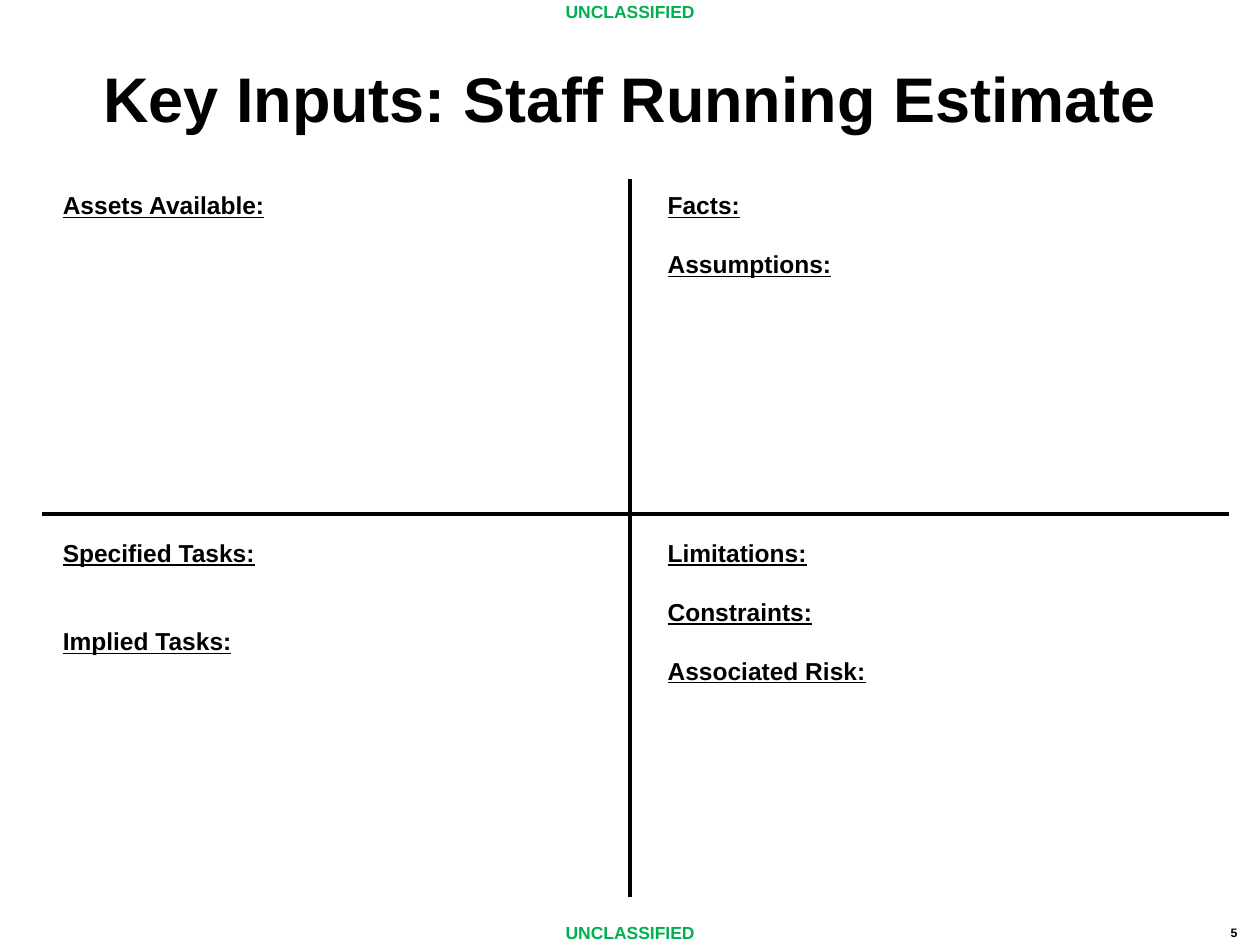
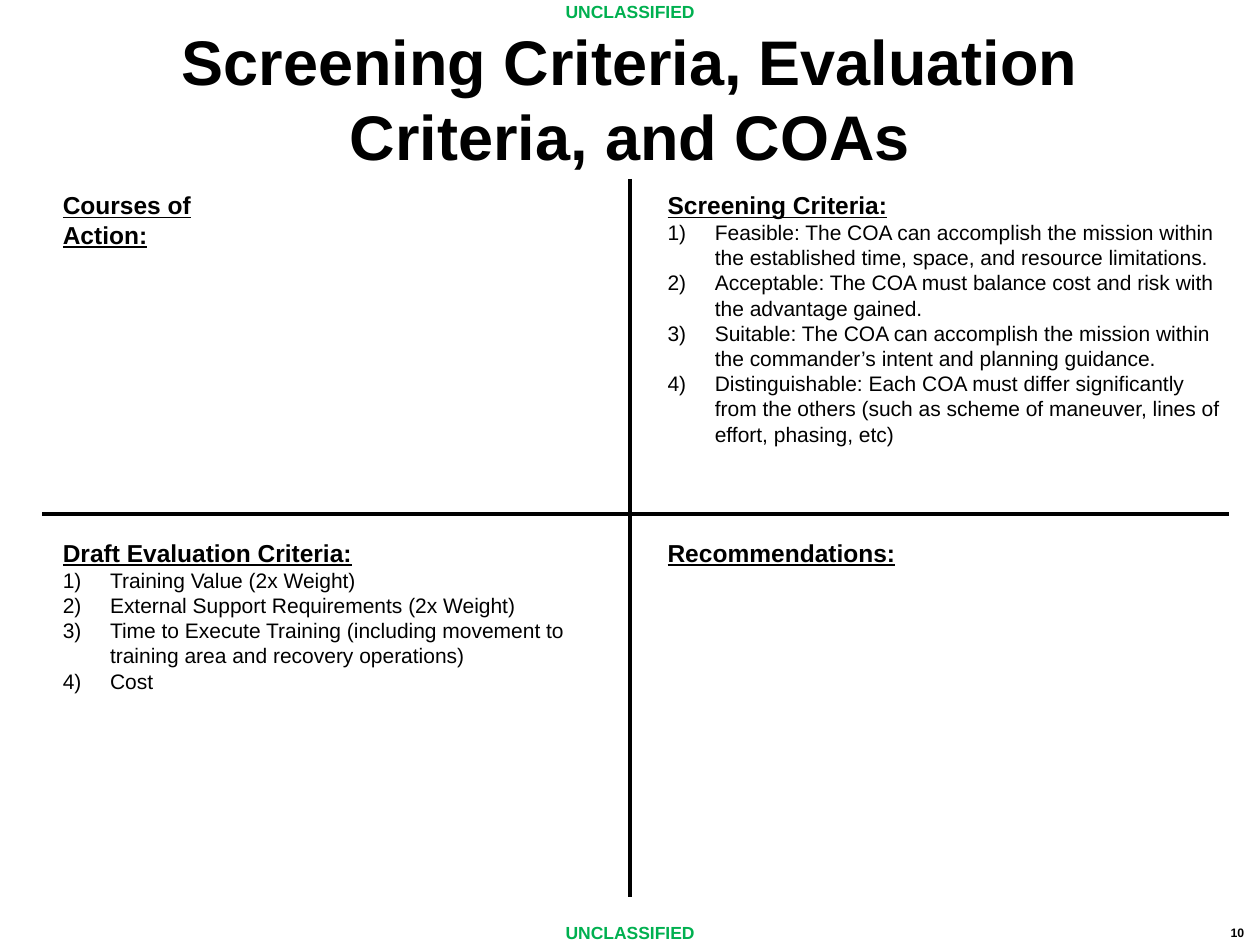
from dataclasses import dataclass

from lxml import etree
from pptx import Presentation
from pptx import util as u
from pptx.dml.color import RGBColor
from pptx.enum import shapes, text
from pptx.oxml import ns

Pt = u.Pt
FONT = "Arial"
HUES = {"ink": "000000", "mark": "00B050"}
LEFT, RIGHT = 28.8, 374.4
UPPER, LOWER = 105.1, 303.8
LINE = 16.8
HANG = 27


@dataclass
class Style:
    size: float
    hue: str = "ink"
    bold: bool = True
    under: bool = False


TITLE = Style(36)
HEAD = Style(14, under=True)
ITEM = Style(12, bold=False)
MARK = Style(10, "mark")
PAGE = Style(7)


@dataclass
class Panel:
    left: float
    top: float
    width: float
    height: float
    heads: tuple[str, ...]
    items: tuple[str, ...] = ()
    wrap: bool = False
    gap: int = 1


@dataclass
class Sheet:
    title: str
    page: int
    panels: tuple[Panel, ...]


SHEETS = (
    Sheet("Key Inputs: Staff Running Estimate", 5, (
        Panel(LEFT, UPPER, 130.3, 58.3, ("Assets Available:",)),
        Panel(RIGHT, UPPER, 108.7, 74.9, ("Facts:", "Assumptions:")),
        Panel(LEFT, LOWER, 313.9, 92.2, ("Specified Tasks:", "Implied Tasks:"),
              wrap=True, gap=2),
        Panel(RIGHT, LOWER, 128.2, 92.2,
              ("Limitations:", "Constraints:", "Associated Risk:")),
    )),
    Sheet("Screening Criteria, Evaluation Criteria, and COAs", 10, (
        Panel(LEFT, UPPER, 139, 58.3, ("Courses of Action:",)),
        Panel(RIGHT, UPPER, 333.4, 172.1, ("Screening Criteria:",), (
            "Feasible: The COA can accomplish the mission within the established "
            "time, space, and resource limitations.",
            "Acceptable: The COA must balance cost and risk with the advantage gained.",
            "Suitable: The COA can accomplish the mission within the commander’s "
            "intent and planning guidance.",
            "Distinguishable: Each COA must differ significantly from the others "
            "(such as scheme of maneuver, lines of effort, phasing, etc)",
        ), wrap=True),
        Panel(LEFT, LOWER, 313.9, 97.2, ("Draft Evaluation Criteria:",), (
            "Training Value (2x Weight)",
            "External Support Requirements (2x Weight)",
            "Time to Execute Training (including movement to training area "
            "and recovery operations)",
            "Cost",
        ), wrap=True),
        Panel(RIGHT, LOWER, 151.2, 24.5, ("Recommendations:",)),
    )),
)


def format_para(para, style: Style, align=text.PP_ALIGN.LEFT) -> None:
    para.alignment = align
    for run in para.runs:
        font = run.font
        font.name, font.size = FONT, Pt(style.size)
        font.bold, font.underline = style.bold, style.under
        font.color.rgb = RGBColor.from_string(HUES[style.hue])


def number_para(para) -> None:
    props = para._p.get_or_add_pPr()
    props.set("marL", str(Pt(HANG)))
    props.set("indent", str(-Pt(HANG)))
    etree.SubElement(props, ns.qn("a:buFont"), typeface="+mj-lt")
    etree.SubElement(props, ns.qn("a:buAutoNum"), type="arabicParenR")


def add_box(slide, left: float, top: float, width: float, height: float,
            lines: tuple[str, ...], wrap: bool = False):
    box = slide.shapes.add_textbox(Pt(left), Pt(top), Pt(width), Pt(height))
    frame = box.text_frame
    frame.text = "\n".join(lines)
    frame.word_wrap = wrap
    frame.auto_size = text.MSO_AUTO_SIZE.SHAPE_TO_FIT_TEXT
    return frame.paragraphs


def add_title(slide, words: str) -> None:
    title = slide.shapes.title
    title.left, title.top, title.width, title.height = map(Pt, (36, 21.6, 648, 68.4))
    frame = title.text_frame
    frame.text = words
    frame.word_wrap = True
    frame.auto_size = text.MSO_AUTO_SIZE.NONE
    frame.vertical_anchor = text.MSO_ANCHOR.MIDDLE
    format_para(frame.paragraphs[0], TITLE, text.PP_ALIGN.CENTER)


def add_rule(slide, *ends: float) -> None:
    rule = slide.shapes.add_connector(shapes.MSO_CONNECTOR.STRAIGHT, *map(Pt, ends))
    rule.line.color.rgb = RGBColor.from_string(HUES["ink"])
    rule.line.width = Pt(2.25)
    etree.SubElement(rule._element.spPr, ns.qn("a:effectLst"))


def add_panel(slide, panel: Panel) -> None:
    paras = add_box(slide, panel.left, panel.top, panel.width, panel.height,
                    panel.heads + panel.items, panel.wrap)
    count = len(panel.heads)
    for rank, para in enumerate(paras):
        if rank < count:
            format_para(para, HEAD)
            if rank:
                para.space_before = Pt(panel.gap * LINE)
        else:
            format_para(para, ITEM)
            number_para(para)


def add_frame(slide, page: int) -> None:
    for top in (-2.9, 523.4):
        para = add_box(slide, 315.4, top, 89.3, 19.4, ("UNCLASSIFIED",))[0]
        format_para(para, MARK, text.PP_ALIGN.CENTER)
    format_para(add_box(slide, 696.2, 524.9, 23, 15.8, (str(page),))[0], PAGE)
    add_rule(slide, 360, 102.2, 360, 512.6)
    add_rule(slide, 702, 293.8, 23.8, 293.8)


def main() -> None:
    deck = Presentation()
    deck.slide_width, deck.slide_height = Pt(720), Pt(540)
    for sheet in SHEETS:
        slide = deck.slides.add_slide(deck.slide_layouts[5])
        add_title(slide, sheet.title)
        add_frame(slide, sheet.page)
        for panel in sheet.panels:
            add_panel(slide, panel)
    deck.save("out.pptx")


if __name__ == "__main__":
    main()
